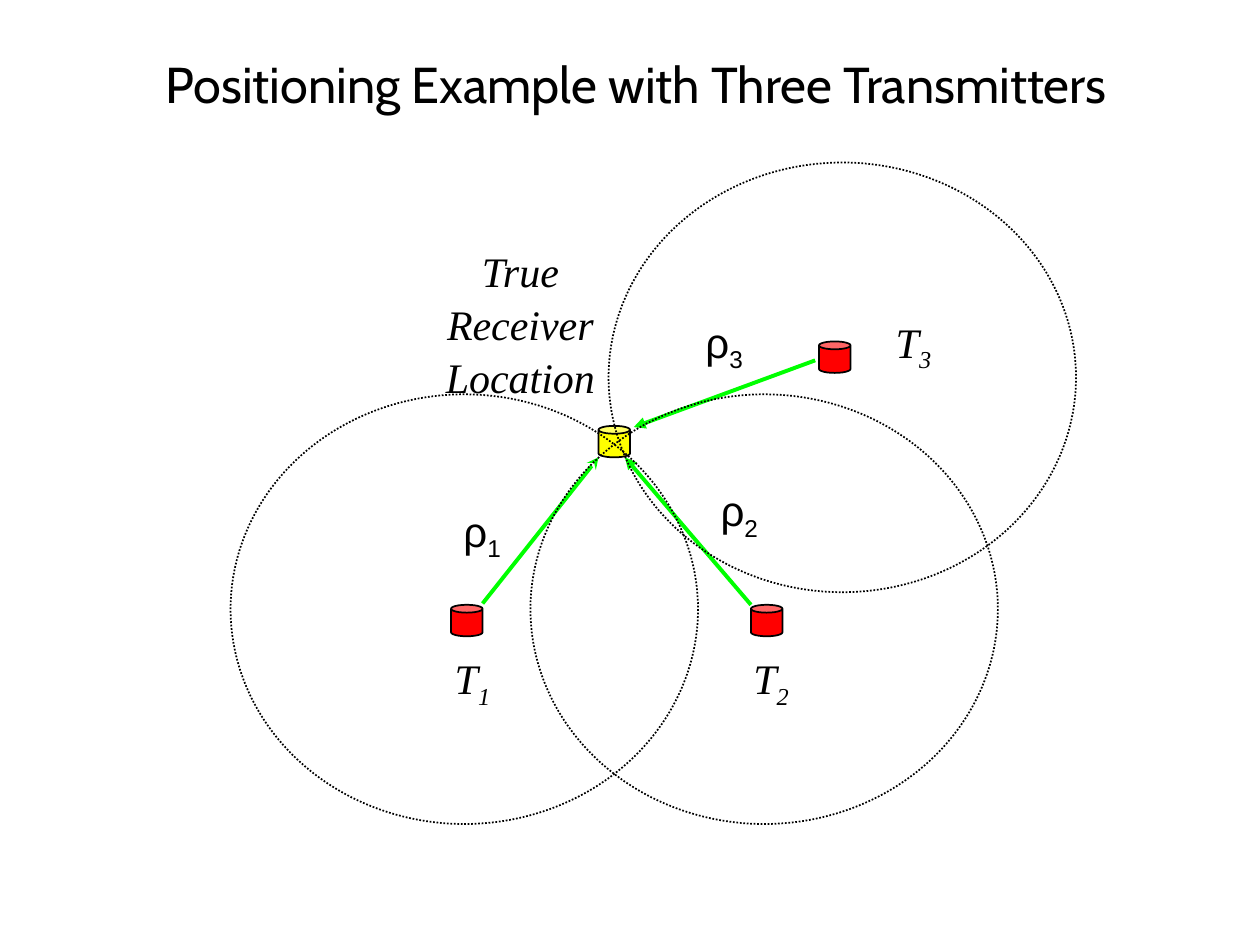
from lxml.etree import SubElement
from pptx import Presentation
from pptx.dml.color import RGBColor
from pptx.enum.dml import MSO_LINE
from pptx.enum.shapes import MSO_CONNECTOR, MSO_SHAPE
from pptx.enum.text import MSO_ANCHOR, MSO_AUTO_SIZE, PP_ALIGN
from pptx.oxml.ns import qn
from pptx.util import Inches, Pt

COLORS = {
    "black": "000000",
    "range": "00FF00",
    "receiver": "FFFF00",
    "transmitter": "FF0000",
}
SERIF, SANS, TITLE_FONT = "Times New Roman", "Arial", "Cabin"
CIRCLE_SIZE = (3.71, 3.41)
CAN_SIZE = (0.25, 0.25)
T_SIZE = (1, 0.5)
RHO_SIZE = (0.58, 0.5)

# Top-left corners of the parts; ends and arrowhead of the range line
TRANSMITTERS = [
    dict(number="1", circle=(1.83, 3.13), can=(3.58, 4.8), t=(3.25, 5.13),
         rho=(3.58, 3.96), line=((3.83, 4.79), (4.75, 3.63)), head="stealth"),
    dict(number="2", circle=(4.21, 3.13), can=(5.96, 4.8), t=(5.62, 5.13),
         rho=(5.62, 3.8), line=((5.96, 4.8), (4.96, 3.63)), head="triangle"),
    dict(number="3", circle=(4.83, 1.29), can=(6.5, 2.71), t=(6.75, 2.46),
         rho=(5.5, 2.46), line=((6.47, 2.86), (5.03, 3.39)), head="triangle"),
]


def rgb(name):
    return RGBColor.from_string(COLORS[name])


def inches(*values):
    return [Inches(v) for v in values]


def write(tf, text, subscript="", font=SERIF, size=24, italic=False,
          align=PP_ALIGN.CENTER, spacing=None):
    """Fill a text frame with one paragraph and an optional subscript."""
    tf.word_wrap = True
    p = tf.paragraphs[0]
    p.alignment = align
    p.line_spacing = spacing
    for part in filter(None, (text, subscript)):
        r = p.add_run()
        r.text = part
        r.font.name = font
        r.font.size = Pt(size)
        r.font.italic = italic
        r.font.color.rgb = rgb("black")
    if subscript:
        r.font._element.set("baseline", "-25000")


def add_label(s, at, size, text, **fmt):
    tf = s.shapes.add_textbox(*inches(*at, *size)).text_frame
    write(tf, text, **fmt)
    tf.auto_size = MSO_AUTO_SIZE.SHAPE_TO_FIT_TEXT


def add_outlined(s, kind, at, size, fill=None, dash=None):
    sp = s.shapes.add_shape(kind, *inches(*at, *size))
    sp.shadow.inherit = False
    if fill:
        sp.fill.solid()
        sp.fill.fore_color.rgb = rgb(fill)
    else:
        sp.fill.background()
    sp.line.color.rgb = rgb("black")
    sp.line.width = Pt(1)
    if dash:
        sp.line.dash_style = dash


def add_can(s, at, fill):
    add_outlined(s, MSO_SHAPE.CAN, at, CAN_SIZE, fill=fill)


def add_range_line(s, start, end, head):
    line = s.shapes.add_connector(MSO_CONNECTOR.STRAIGHT,
                                  *inches(*start, *end))
    line.line.color.rgb = rgb("range")
    line.line.width = Pt(2.25)
    SubElement(line.line._get_or_add_ln(), qn("a:tailEnd"), type=head)
    SubElement(line._element.spPr, qn("a:effectLst"))


def add_title(s, text):
    title = s.shapes.title
    title.left, title.top, title.width, title.height = inches(
        0.83, 0.25, 8.44, 0.83)
    tf = title.text_frame
    tf.vertical_anchor = MSO_ANCHOR.MIDDLE
    tf.auto_size = MSO_AUTO_SIZE.NONE
    write(tf, text, font=TITLE_FONT, size=28.8)


def add_transmitter(s, unit):
    number = unit["number"]
    add_outlined(s, MSO_SHAPE.OVAL, unit["circle"], CIRCLE_SIZE,
                 dash=MSO_LINE.ROUND_DOT)
    add_can(s, unit["can"], "transmitter")
    add_label(s, unit["t"], T_SIZE, "T", subscript=number, italic=True)
    add_label(s, unit["rho"], RHO_SIZE, "ρ", subscript=number, font=SANS,
              align=PP_ALIGN.LEFT)


def main():
    prs = Presentation()
    prs.slide_width, prs.slide_height = inches(10, 7.5)
    s = prs.slides.add_slide(prs.slide_layouts[5])
    add_title(s, "Positioning Example with Three Transmitters")
    for unit in TRANSMITTERS:
        add_range_line(s, *unit["line"], unit["head"])
    add_can(s, (4.75, 3.38), "receiver")
    add_label(s, (3.17, 1.88), (1.92, 1.31), "True Receiver Location",
              italic=True, spacing=1.05)
    for unit in TRANSMITTERS:
        add_transmitter(s, unit)
    prs.save("out.pptx")


if __name__ == "__main__":
    main()
